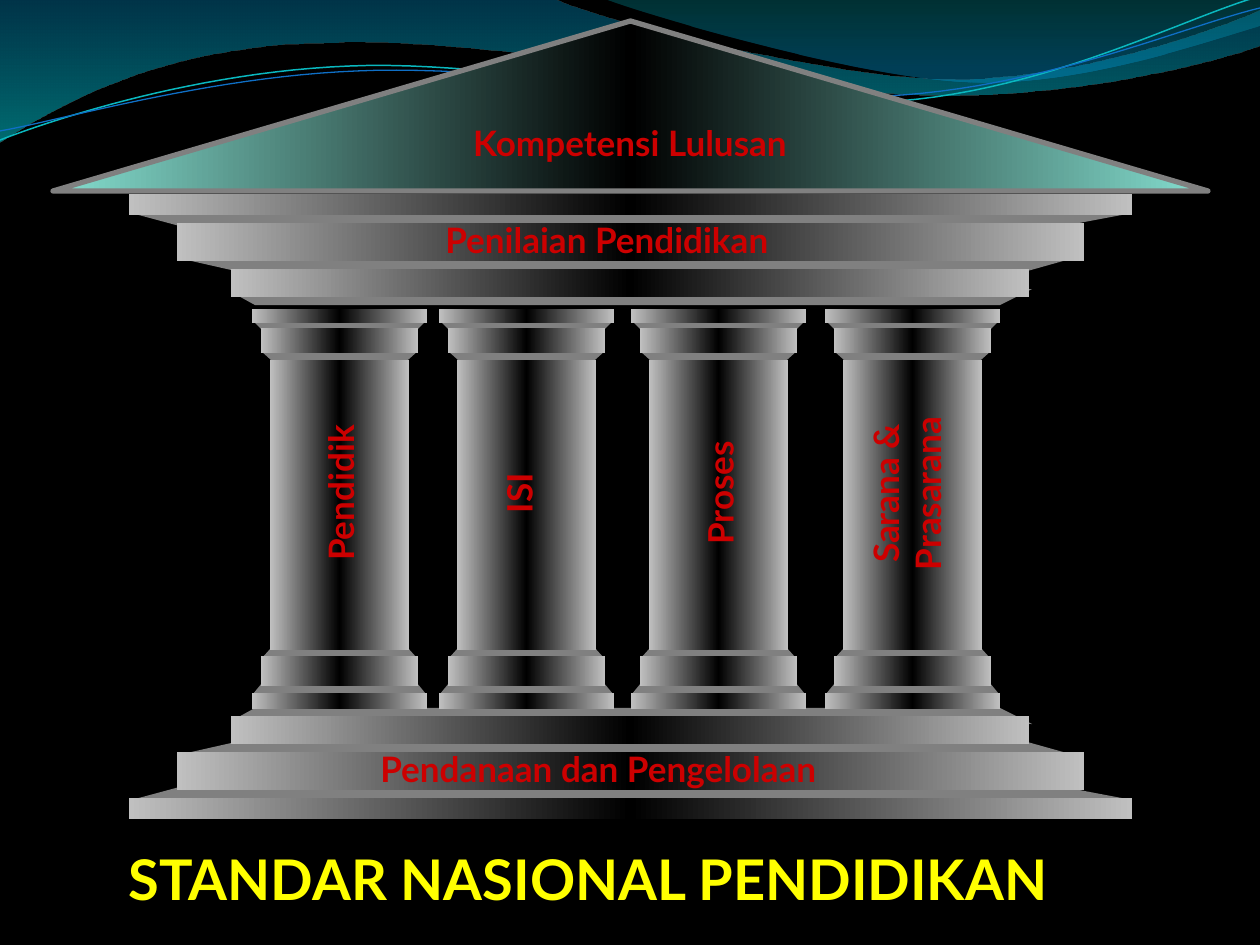
from dataclasses import dataclass

from lxml.etree import SubElement
from pptx import Presentation
from pptx.dml.color import RGBColor
from pptx.enum.shapes import MSO_SHAPE
from pptx.enum.text import MSO_AUTO_SIZE, PP_ALIGN
from pptx.oxml.ns import qn
from pptx.util import Emu, Pt

SCALE = 914400 / 126  # EMU in one px


@dataclass(frozen=True)
class Theme:
    font: str = "Lato"
    label_size: int = 20
    title_size: int = 32
    background: str = "000000"
    label: str = "CC0000"
    title: str = "FFFF00"
    title_shadow: str = "04303C"
    trim: str = "808080"
    # Gradient stops: position, colour, opacity (percent)
    stone: tuple = ((0, "C0C0C0", 100), (50, "000000", 100), (100, "C0C0C0", 100))
    roof: tuple = ((0, "85DFD0", 100), (50, "000000", 100), (100, "85DFD0", 100))
    wide_wave: tuple = ((0, "0074A1", 45), (100, "00C6CF", 55))
    right_wave: tuple = ((0, "00A1A9", 30), (80, "008BBF", 45))
    teal_line: str = "0AB8BF"
    blue_line: str = "0F6FC6"


THEME = Theme()


def px(length):
    return Emu(round(length * SCALE))


def color(value):
    return RGBColor.from_string(value)


def set_gradient(shape, stops, angle=0):
    shape.fill.gradient()
    shape.fill.gradient_angle = angle
    stop_list = next(shape.element.spPr.iter(qn("a:gsLst")))
    for old_stop in list(stop_list):
        stop_list.remove(old_stop)
    for position, value, opacity in stops:
        stop = SubElement(stop_list, qn("a:gs"), pos=str(position * 1000))
        stop_color = SubElement(stop, qn("a:srgbClr"), val=value)
        if opacity < 100:
            SubElement(stop_color, qn("a:alpha"), val=str(opacity * 1000))


def add_outline(shapes, points, close=True):
    points = [(px(x), px(y)) for x, y in points]
    builder = shapes.build_freeform(*points[0])
    builder.add_line_segments(points[1:], close=close)
    shape = builder.convert_to_shape()
    shape.shadow.inherit = False
    shape.line.fill.background()
    return shape


def add_trim(shapes, points):
    shape = add_outline(shapes, points)
    shape.fill.solid()
    shape.fill.fore_color.rgb = color(THEME.trim)


def add_stone(shapes, left, top, width, height):
    shape = shapes.add_shape(MSO_SHAPE.RECTANGLE, px(left), px(top), px(width), px(height))
    shape.shadow.inherit = False
    shape.line.fill.background()
    set_gradient(shape, THEME.stone)


def trace(start, *segments, steps=24):
    """Points along segments: one point is a line, three are a Bezier curve."""
    points = [start]
    for segment in segments:
        if len(segment) == 1:
            points.append(segment[0])
            continue
        nodes = (points[-1], *segment)
        for step in range(1, steps + 1):
            t = step / steps
            weights = ((1 - t) ** 3, 3 * t * (1 - t) ** 2, 3 * t * t * (1 - t), t ** 3)
            points.append(tuple(sum(w * node[axis] for w, node in zip(weights, nodes))
                                for axis in (0, 1)))
    return points


def draw_waves(shapes, left, top):
    def place(points):
        return [(left + x, top + y) for x, y in points]

    # Filled waves
    wide = trace((0, 0), ((554, -1),),
                 ((600, 21), (837, 79), (955, 79)), ((1075, 79), (1207, 33), (1260, 11)),
                 ((1261, 45),),
                 ((1238, 55), (1096, 96), (940, 95)), ((784, 95), (481, 35), (324, 43)),
                 ((163, 45), (58, 105), (-1, 142)))
    right = trace((604, -1), ((641, 14), (859, 78), (969, 82)),
                  ((1079, 87), (1211, 40), (1260, 26)), ((1260, 0),))
    for points, stops in ((wide, THEME.wide_wave), (right, THEME.right_wave)):
        set_gradient(add_outline(shapes, place(points)), stops, angle=270)

    # Thin lines
    teal = trace((0, 140), ((60, 117), (199, 72), (349, 66)),
                 ((498, 59), (747, 112), (898, 101)), ((1050, 89), (1182, 19), (1257, -3)))
    blue = trace((0, 131), ((59, 121), (207, 77), (357, 71)),
                 ((508, 64), (752, 106), (903, 95)), ((1053, 84), (1186, 26), (1260, 8)))
    group = shapes.add_group_shape()
    for points, value, width in ((teal, THEME.teal_line, 0.85), (blue, THEME.blue_line, 0.75)):
        line = add_outline(group.shapes, place(points), close=False)
        line.fill.background()
        line.line.color.rgb = color(value)
        line.line.width = Pt(width)


def draw_steps(shapes, left, top, height, upside_down=False):
    """Three stone courses, narrowing downwards, or upwards when upside_down."""
    def place(points):
        return [(left + x, top + (height - y if upside_down else y)) for x, y in points]

    # Trims behind the courses
    add_trim(shapes, place([(104, 99), (126, 111), (871, 111), (903, 95)]))
    add_trim(shapes, place([(6, 20), (58, 34), (58, 66), (111, 78),
                            (895, 78), (945, 64), (945, 30), (998, 20)]))
    # Courses
    for x, y, width, depth in ((0, 0, 1003, 21), (48, 29, 907, 38), (102, 75, 798, 28)):
        (_, start), (_, end) = place([(x, y), (x, y + depth)])
        add_stone(shapes, left + x, min(start, end), width, depth)


def draw_column(shapes, left, top, width):
    def add_column_trim(heights):
        side = list(zip((1, 10, 10, 19), heights))
        mirrored = [(width - x, y) for x, y in reversed(side)]
        add_trim(shapes, [(left + x, top + y) for x, y in side + mirrored])

    def add_block(inset, offset, height):
        add_stone(shapes, left + inset, top + offset, width - 2 * inset, height)

    # Foot and shaft
    add_column_trim((385, 374, 349, 339))
    add_block(0, 384, 16)
    add_block(9, 347, 30)
    add_block(18, 51, 290)
    # Capital
    add_column_trim((12, 21, 43, 51))
    add_block(0, 0, 14)
    add_block(9, 19, 25)


def draw_pediment(shapes, left, top, width, height):
    roof = shapes.add_shape(MSO_SHAPE.ISOSCELES_TRIANGLE, px(left), px(top), px(width), px(height))
    roof.shadow.inherit = False
    set_gradient(roof, THEME.roof)
    roof.line.color.rgb = color(THEME.trim)
    roof.line.width = Pt(3)


def draw_temple(shapes, left, top):
    draw_steps(shapes, left + 76, top + 687, 111, upside_down=True)
    for column_left in (199, 386, 578, 772):
        draw_column(shapes, left + column_left, top + 288, 175)
    draw_steps(shapes, left + 76, top + 173, 111)
    draw_pediment(shapes, left, top, 1155, 170)


def add_label(shapes, text, box, align=None, rotation=0, wrap=False,
              size=THEME.label_size, value=THEME.label):
    label = shapes.add_textbox(*map(px, box))
    label.rotation = rotation
    frame = label.text_frame
    frame.text = text
    frame.word_wrap = wrap
    frame.auto_size = MSO_AUTO_SIZE.SHAPE_TO_FIT_TEXT
    for paragraph in frame.paragraphs:
        paragraph.alignment = align
        if not wrap:
            properties = paragraph._p.get_or_add_pPr()
            properties.set("marL", str(px(48)))
            properties.set("indent", str(-px(48)))
        for run in paragraph.runs:
            run.font.name = THEME.font
            run.font.size = Pt(size)
            run.font.bold = True
            run.font.color.rgb = color(value)
    return label


def draw_labels(shapes):
    # Roof, entablature and base
    add_label(shapes, "Kompetensi Lulusan", (357, 115, 546, 54), PP_ALIGN.CENTER, wrap=True)
    add_label(shapes, "Penilaian Pendidikan", (433, 212, 393, 54))
    # Columns
    for text, box in (("Pendidik", (251, 466, 178, 54)), ("ISI", (478, 466, 81, 54)),
                      ("Proses", (649, 466, 141, 54)),
                      ("Sarana &\nPrasarana", (805, 445, 203, 97))):
        add_label(shapes, text, box, PP_ALIGN.CENTER, rotation=270)
    add_label(shapes, "Pendanaan dan Pengelolaan", (368, 741, 523, 54))


def draw_title(shapes, box):
    title = add_label(shapes, "STANDAR NASIONAL PENDIDIKAN", box,
                      size=THEME.title_size, value=THEME.title)
    # Text shadow, placed right after the text fill
    fill = next(title.element.iter(qn("a:rPr"))).find(qn("a:solidFill"))
    effects = fill.makeelement(qn("a:effectLst"))
    fill.addnext(effects)
    shadow = SubElement(effects, qn("a:outerShdw"), dist="38100", dir="2700000")
    SubElement(shadow, qn("a:srgbClr"), val=THEME.title_shadow)


def main():
    presentation = Presentation()
    presentation.slide_width, presentation.slide_height = px(1260), px(945)
    slide = presentation.slides.add_slide(presentation.slide_layouts[6])
    slide.background.fill.solid()
    slide.background.fill.fore_color.rgb = color(THEME.background)
    draw_waves(slide.shapes, 0, 0)
    draw_temple(slide.shapes.add_group_shape().shapes, 53, 21)
    draw_labels(slide.shapes)
    draw_title(slide.shapes, (116, 838, 1005, 79))
    presentation.save("out.pptx")


if __name__ == "__main__":
    main()
